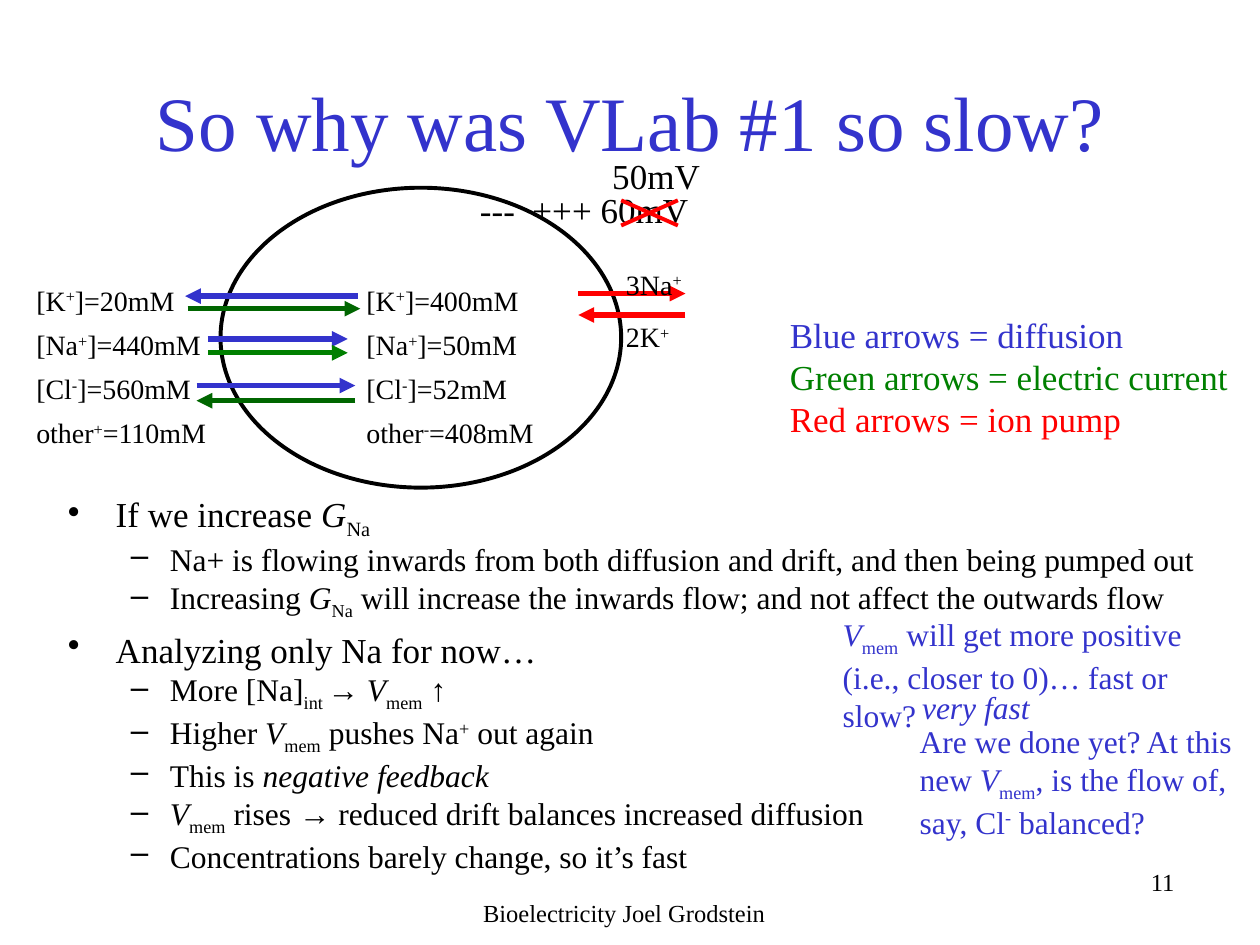
from lxml.etree import SubElement
from pptx import Presentation
from pptx.dml.color import RGBColor
from pptx.enum.shapes import MSO_CONNECTOR as CONN, MSO_SHAPE as SHAPE
from pptx.enum.text import MSO_ANCHOR as ANCHOR, MSO_AUTO_SIZE as AUTO, PP_ALIGN as ALIGN
from pptx.oxml.ns import qn
from pptx.util import Inches, Pt

COLORS = {"black": "000000", "blue": "3333CC", "green": "008000",
          "dark_green": "006600", "red": "FF0000"}
MARKS = {"/": {"italic": True}, "_": {"baseline": "-25000"}, "^": {"baseline": "30000"}}
LEVELS = [{"bullet": "•", "size": 20, "margin": 0.38, "hang": 0.38, "before": 4},
          {"bullet": "–", "size": 18, "margin": 0.81, "hang": 0.31, "before": 0}]

INSIDE = ["[K|^+|]=400mM", "[Na|^+|]=50mM", "[Cl|^-|]=52mM", "other|^-|=408mM"]
OUTSIDE = ["[K|^+|]=20mM", "[Na|^+|]=440mM", "[Cl|^-|]=560mM", "other|^+|=110mM"]
LEGEND = [("Blue arrows = diffusion", "blue"),
          ("Green arrows = electric current", "green"),
          ("Red arrows = ion pump", "red")]
BULLETS = [
    (0, "If we increase |/G|_Na"),
    (1, "Na+ is flowing inwards from both diffusion and drift, and then being pumped out"),
    (1, "Increasing |/G|_Na| will increase the inwards flow; and not affect the outwards flow"),
    (0, "Analyzing only Na for now…"),
    (1, "More [Na]|_int |→ |/V|_mem| ↑"),
    (1, "Higher |/V|_mem| pushes Na|^+| out again"),
    (1, "This is |/negative feedback"),
    (1, "/V|_mem| rises → reduced drift balances increased diffusion"),
    (1, "Concentrations barely change, so it’s fast"),
]
ARROWS = [
    (2.84, 1.47, 2.35, "blue"), (1.49, 2.86, 2.45, "dark_green"),
    (1.65, 2.76, 2.69, "blue"), (1.65, 2.76, 2.8, "green"),
    (1.56, 2.82, 3.06, "blue"), (2.82, 1.56, 3.18, "dark_green"),
    (4.59, 5.44, 2.33, "red"), (5.44, 4.59, 2.5, "red"),
]


class Deck:
    """Holds the text style and the current slide, and draws each kind of element."""

    def __init__(self, font):
        self.font = font
        self.prs = Presentation()
        self.prs.slide_width, self.prs.slide_height = Inches(10), Inches(7.5)
        self.slide = self.prs.slides.add_slide(self.prs.slide_layouts[5])

    def add_runs(self, p, text, size, color="black"):
        for part in text.split("|"):
            mark = MARKS.get(part[0], {})
            r = p.add_run()
            r.text = part[1:] if mark else part
            style = {"name": self.font, "size": Pt(size), "italic": mark.get("italic", False)}
            for name, value in style.items():
                setattr(r.font, name, value)
            r.font.color.rgb = RGBColor.from_string(COLORS[color])
            if "baseline" in mark:
                r._r.get_or_add_rPr().set("baseline", mark["baseline"])

    def title(self, text, box):
        sp = self.slide.shapes.title
        sp.left, sp.top, sp.width, sp.height = map(Inches, box)
        tf = sp.text_frame
        tf.auto_size, tf.vertical_anchor = AUTO.NONE, ANCHOR.MIDDLE
        tf.paragraphs[0].alignment = ALIGN.CENTER
        self.add_runs(tf.paragraphs[0], text, 44, "blue")

    def frame(self, box, wrap=True, inset=True):
        tf = self.slide.shapes.add_textbox(*map(Inches, box)).text_frame
        tf.word_wrap = wrap
        if not inset:
            for side in ("left", "right", "top", "bottom"):
                setattr(tf, f"margin_{side}", 0)
        return tf

    def paragraph(self, tf, first, **fmt):
        p = tf.paragraphs[0] if first else tf.add_paragraph()
        for name, value in fmt.items():
            setattr(p, name, value)
        return p

    def text(self, lines, box, size, color="black", wrap=True, inset=True, **fmt):
        tf = self.frame(box, wrap, inset)
        for i, line in enumerate(lines):
            self.add_runs(self.paragraph(tf, i == 0, **fmt), line, size, color)
        return tf

    def legend(self, entries, box):
        tf = self.frame(box)
        for i, (line, color) in enumerate(entries):
            self.add_runs(self.paragraph(tf, i == 0), line, 20, color)

    def bullets(self, items, box):
        tf = self.frame(box)
        for i, (level, line) in enumerate(items):
            fmt = LEVELS[level]
            p = self.paragraph(tf, i == 0, level=level, space_before=Pt(fmt["before"]))
            pPr = p._p.get_or_add_pPr()
            pPr.set("marL", str(Inches(fmt["margin"])))
            pPr.set("indent", str(-Inches(fmt["hang"])))
            SubElement(pPr, qn("a:buChar")).set("char", fmt["bullet"])
            self.add_runs(p, line, fmt["size"])

    def ellipse(self, box):
        sp = self.slide.shapes.add_shape(SHAPE.OVAL, *map(Inches, box))
        sp.shadow.inherit = False
        sp.fill.background()
        sp.line.color.rgb = RGBColor.from_string(COLORS["black"])
        sp.line.width = Pt(2.25)

    def line(self, x1, y1, x2, y2, color, width=3, arrow=True):
        sp = self.slide.shapes.add_connector(CONN.STRAIGHT, *map(Inches, (x1, y1, x2, y2)))
        sp.line.color.rgb = RGBColor.from_string(COLORS[color])
        sp.line.width = Pt(width)
        if arrow:
            SubElement(sp.get_or_add_ln(), qn("a:tailEnd")).set("type", "triangle")
        SubElement(sp._element.spPr, qn("a:effectLst"))


def main():
    deck = Deck("Times New Roman")
    deck.title("So why was VLab #1 so slow?", (0.75, 0.33, 8.5, 1.25))
    deck.text(["11"], (6.25, 6.83, 3.17, 0.5), 14, alignment=ALIGN.RIGHT)
    deck.bullets(BULLETS, (0.44, 3.86, 9.18, 3.14))
    deck.text(["Bioelectricity Joel Grodstein"], (3.37, 7.08, 3.17, 0.34), 14,
              alignment=ALIGN.CENTER)

    deck.ellipse((1.75, 1.49, 3.18, 2.38))
    deck.text(INSIDE, (2.81, 2.2, 1.55, 1.43), 16, space_before=Pt(6))
    deck.text(OUTSIDE, (0.19, 2.2, 1.64, 1.43), 16, space_before=Pt(6))
    deck.legend(LEGEND, (6.17, 2.44, 3.72, 1.11))
    deck.text(["---  +++ 60mV"], (3.81, 1.5, 1.66, 0.34), 20, wrap=False, inset=False)
    for start, end, y, color in ARROWS:
        deck.line(start, y, end, y, color)
    pump = deck.text(["3Na|^+", "2K|^+"], (4.87, 2.02, 0.7, 0.84), 16)
    for p, spacing in zip(pump.paragraphs, (23, 30)):
        p.line_spacing = Pt(spacing)

    deck.text(["/V|_mem| will get more positive (i.e., closer to 0)… fast or slow?"],
              (6.59, 4.83, 3.03, 1.01), 18, "blue")
    deck.text(["Are we done yet? At this new |/V|_mem|, is the flow of, say, Cl|^-| balanced?"],
              (7.2, 5.68, 2.78, 1.01), 18, "blue")
    deck.text(["/very fast"], (7.22, 5.41, 1.14, 0.4), 18, "blue")
    deck.text([" 50mV"], (4.79, 1.23, 0.77, 0.34), 20, inset=False)
    for y1, y2 in ((1.59, 1.79), (1.79, 1.59)):
        deck.line(4.93, y1, 5.38, y2, "red", 2.25, arrow=False)
    deck.prs.save("out.pptx")


if __name__ == "__main__":
    main()
